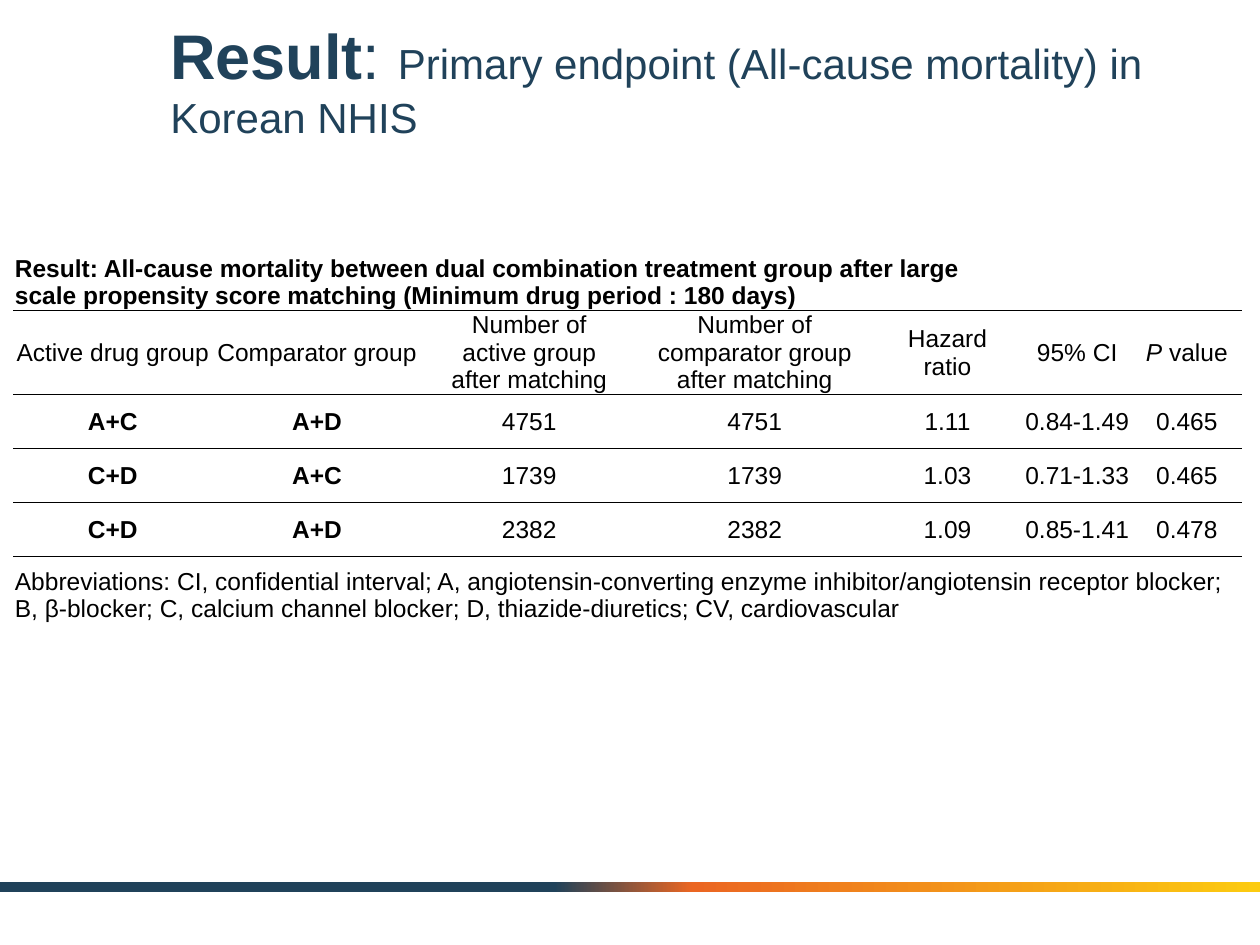
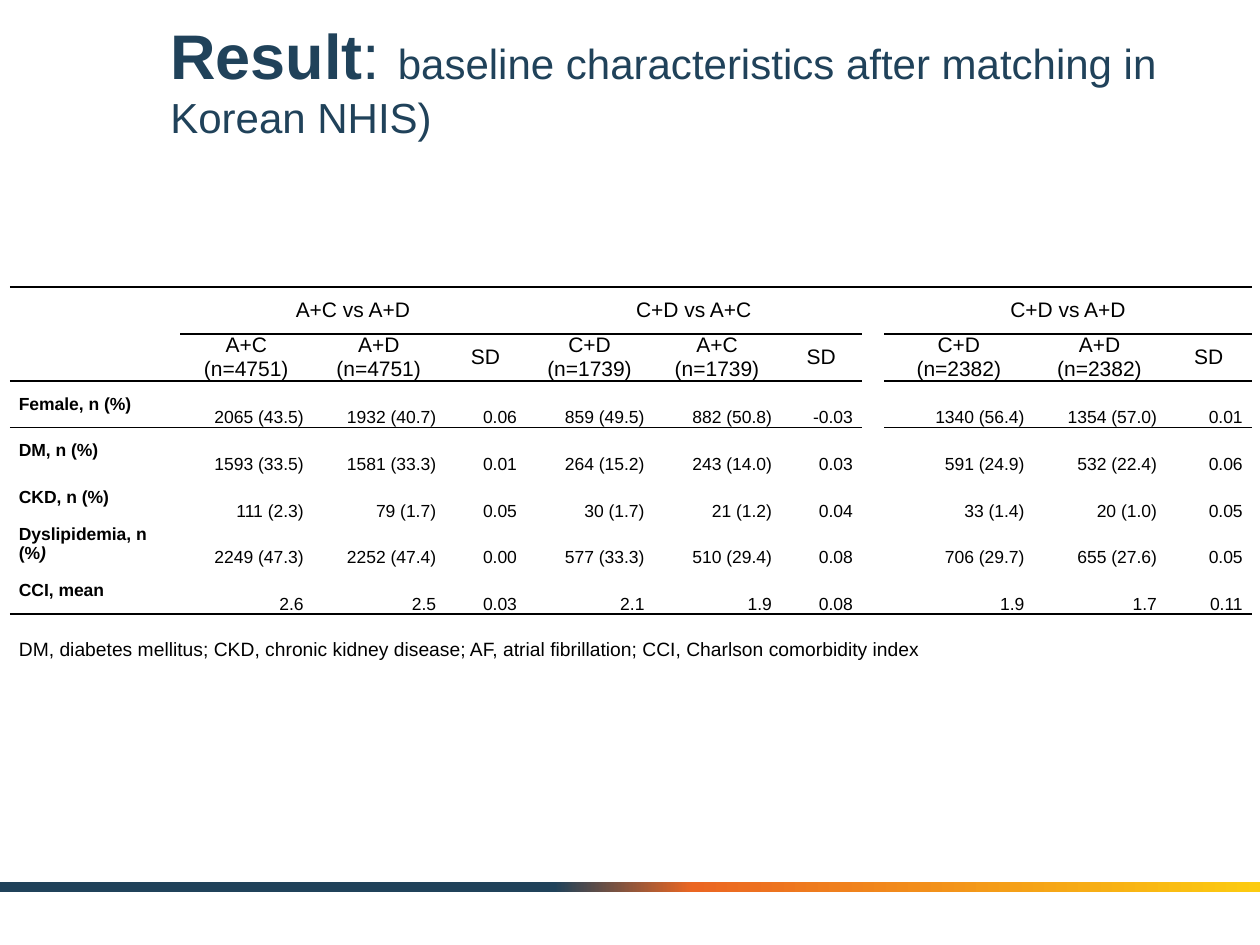
from lxml.etree import SubElement
from pptx import Presentation
from pptx.dml.color import RGBColor
from pptx.enum.shapes import MSO_SHAPE
from pptx.enum.text import MSO_ANCHOR, MSO_AUTO_SIZE, PP_ALIGN
from pptx.oxml.ns import qn
from pptx.util import Cm, Pt

FONT = "Arial"
COLORS = {"navy": "20425A", "orange": "EB6622", "yellow": "FCCB10",
          "black": "000000", "white": "FFFFFF"}
BAND_STOPS = [(44, "navy"), (55, "orange"), (100, "yellow")]
NO_GRID_STYLE = "{2D5ABB26-0587-4C30-8999-92F81FD0307C}"

# Text between asterisks is italic.
MORTALITY = {
    "title": "Primary endpoint (All-cause mortality) in Korean NHIS",
    "caption": "Result: All-cause mortality between dual combination treatment group "
               "after large scale propensity score matching "
               "(Minimum drug period : 180 days)",
    "header": ["Active drug group", "Comparator group",
               "Number of\nactive group\nafter matching",
               "Number of\ncomparator group after matching",
               "Hazard\nratio", "95% CI", "*P* value"],
    "rows": [
        ["A+C", "A+D", "4751", "4751", "1.11", "0.84-1.49", "0.465"],
        ["C+D", "A+C", "1739", "1739", "1.03", "0.71-1.33", "0.465"],
        ["C+D", "A+D", "2382", "2382", "1.09", "0.85-1.41", "0.478"],
    ],
    "note": "Abbreviations: CI, confidential interval; A, angiotensin-converting enzyme "
            "inhibitor/angiotensin receptor blocker; B, β-blocker; C, calcium channel "
            "blocker; D, thiazide-diuretics; CV, cardiovascular",
    "widths": [4.01, 4.22, 4.34, 4.75, 3.02, 2.21, 2.21],
    "heights": [1.09, 1.63, 1.09, 1.09, 1.09, 1.55],
}

BASELINE = {
    "title": "baseline characteristics after matching in Korean NHIS)",
    "groups": {1: "A+C vs A+D", 4: "C+D vs A+C", 8: "C+D vs A+D"},
    "header": ["", "A+C (n=4751)", "A+D (n=4751)", "SD",
               "C+D (n=1739)", "A+C (n=1739)", "SD", "",
               "C+D\n(n=2382)", "A+D (n=2382)", "SD"],
    "rows": [
        ["Female, n (%)", "2065 (43.5)", "1932 (40.7)", "0.06",
         "859 (49.5)", "882 (50.8)", "-0.03", "", "1340 (56.4)", "1354 (57.0)", "0.01"],
        ["DM, n (%)", "1593 (33.5)", "1581 (33.3)", "0.01",
         "264 (15.2)", "243 (14.0)", "0.03", "", "591 (24.9)", "532 (22.4)", "0.06"],
        ["CKD, n (%)", "111 (2.3)", "79 (1.7)", "0.05",
         "30 (1.7)", "21 (1.2)", "0.04", "", "33 (1.4)", "20 (1.0)", "0.05"],
        ["Dyslipidemia, n (%*)*", "2249 (47.3)", "2252 (47.4)", "0.00",
         "577 (33.3)", "510 (29.4)", "0.08", "", "706 (29.7)", "655 (27.6)", "0.05"],
        ["CCI, mean", "2.6", "2.5", "0.03", "2.1", "1.9", "0.08", "", "1.9", "1.7", "0.11"],
    ],
    "note": "DM, diabetes mellitus; CKD, chronic kidney disease; AF, atrial fibrillation; "
            "CCI, Charlson comorbidity index",
    "widths": [3.43, 2.67, 2.67, 1.63, 2.57, 2.57, 1.63, 0.43, 3.0, 2.67, 1.73],
    "heights": [0.94] * 8,
}


def rgb(name):
    return RGBColor.from_string(COLORS[name])


def style_run(run, size, color="black", bold=False, italic=False):
    run.font.name = FONT
    run.font.size = Pt(size)
    run.font.bold = bold
    run.font.italic = italic
    run.font.color.rgb = rgb(color)


def add_band(slide, slide_width):
    band = slide.shapes.add_shape(MSO_SHAPE.RECTANGLE, 0, Cm(17.78), slide_width, Cm(0.2))
    band.shadow.inherit = False
    band.line.fill.background()
    band.fill.gradient()
    band.fill.gradient_angle = 0
    stops = band.element.spPr.find(".//" + qn("a:gsLst"))
    for stop in list(stops):
        stops.remove(stop)
    for percent, color in BAND_STOPS:
        stop = SubElement(stops, qn("a:gs"), pos=str(percent * 1000))
        SubElement(stop, qn("a:srgbClr"), val=COLORS[color])


def add_result_slide(presentation, topic):
    slide = presentation.slides.add_slide(presentation.slide_layouts[5])
    add_band(slide, presentation.slide_width)
    title = slide.shapes.title
    title.left, title.top, title.width, title.height = Cm(3.18), Cm(0.43), Cm(20.96), Cm(2.34)
    frame = title.text_frame
    frame.auto_size = MSO_AUTO_SIZE.NONE
    frame.vertical_anchor = MSO_ANCHOR.MIDDLE
    paragraph = frame.paragraphs[0]
    paragraph.alignment = PP_ALIGN.LEFT
    for text, size, bold in [("Result", 36, True), (": ", 36, False), (topic, 24, False)]:
        run = paragraph.add_run()
        run.text = text
        style_run(run, size, "navy", bold)
    return slide


def add_plain_table(slide, left, top, widths, heights, margins, fill=None):
    """Add a table without grid; margins are left and right, then top, in cm."""
    frame = slide.shapes.add_table(len(heights), len(widths), Cm(left), Cm(top),
                                   Cm(sum(widths)), Cm(sum(heights)))
    frame.element.find(".//" + qn("a:tableStyleId")).text = NO_GRID_STYLE
    table = frame.table
    table.first_row = table.horz_banding = False
    for column, width in zip(table.columns, widths):
        column.width = Cm(width)
    for row, height in zip(table.rows, heights):
        row.height = Cm(height)
    for cell in table.iter_cells():
        cell.margin_left = cell.margin_right = Cm(margins[0])
        cell.margin_top, cell.margin_bottom = Cm(margins[1]), 0
        if fill:
            cell.fill.solid()
            cell.fill.fore_color.rgb = rgb(fill)
        else:
            cell.fill.background()
    return table


def set_cell(cell, text, size, bold=False, align=PP_ALIGN.CENTER, anchor=MSO_ANCHOR.MIDDLE):
    cell.vertical_anchor = anchor
    frame = cell.text_frame
    if "*" in text:
        for index, part in enumerate(text.split("*")):
            if part:
                run = frame.paragraphs[0].add_run()
                run.text = part
                style_run(run, size, bold=bold, italic=index % 2 == 1)
    else:
        frame.text = text
        for paragraph in frame.paragraphs:
            for run in paragraph.runs:
                style_run(run, size, bold=bold)
    for paragraph in frame.paragraphs:
        paragraph.alignment = align


def merge_across(table, row, first, last):
    cell = table.cell(row, first)
    cell.merge(table.cell(row, last))
    return cell


def add_border(cell, tag, points):
    properties = cell._tc.get_or_add_tcPr()
    line = SubElement(properties, qn(tag), w=str(Pt(points)))
    fill = SubElement(line, qn("a:solidFill"))
    SubElement(fill, qn("a:srgbClr"), val=COLORS["black"])
    borders_before = len(properties.findall(qn("a:lnT"))) if tag == "a:lnB" else 0
    properties.insert(borders_before, line)


def rule_below(table, row, columns, points):
    """Draw a line under a row; row -1 stands for the table's top edge."""
    for column in columns:
        if row >= 0:
            add_border(table.cell(row, column), "a:lnB", points)
        if row + 1 < len(table.rows):
            add_border(table.cell(row + 1, column), "a:lnT", points)


def build_mortality(presentation):
    data = MORTALITY
    slide = add_result_slide(presentation, data["title"])
    table = add_plain_table(slide, 0.27, 5.11, data["widths"], data["heights"], (0.03, 0.03))
    last_row, last_column = len(data["heights"]) - 1, len(data["widths"]) - 1
    set_cell(merge_across(table, 0, 0, 4), data["caption"], 14, True, PP_ALIGN.LEFT)
    for r, row in enumerate([data["header"]] + data["rows"], start=1):
        for c, text in enumerate(row):
            set_cell(table.cell(r, c), text, 14, bold=r > 1 and c < 2)
    set_cell(merge_across(table, last_row, 0, last_column), data["note"], 14,
             align=PP_ALIGN.LEFT)
    for r in range(last_row):
        rule_below(table, r, range(last_column + 1), 0.5)


def build_baseline(presentation):
    data = BASELINE
    slide = add_result_slide(presentation, data["title"])
    table = add_plain_table(slide, 0.2, 5.79, data["widths"], data["heights"],
                            (0.18, 0), "white")
    last_row, columns = len(data["heights"]) - 1, range(len(data["widths"]))
    group_columns = [first + k for first in data["groups"] for k in range(3)]
    for first, name in data["groups"].items():
        set_cell(merge_across(table, 0, first, first + 2), name, 12)
    for c, text in enumerate(data["header"]):
        set_cell(table.cell(1, c), text, 12)
    for r, (label, *values) in enumerate(data["rows"], start=2):
        set_cell(table.cell(r, 0), label, 10, True, PP_ALIGN.LEFT)
        for c, value in enumerate(values, start=1):
            set_cell(table.cell(r, c), value, 10, align=PP_ALIGN.RIGHT,
                     anchor=MSO_ANCHOR.BOTTOM)
    set_cell(merge_across(table, last_row, 0, columns[-1]), data["note"], 11,
             align=PP_ALIGN.LEFT, anchor=MSO_ANCHOR.BOTTOM)
    for row, ruled in [(-1, columns), (0, group_columns),
                       (1, [0] + group_columns), (last_row - 1, columns)]:
        rule_below(table, row, ruled, 1)


def main():
    presentation = Presentation()
    presentation.slide_width, presentation.slide_height = Cm(25.4), Cm(19.05)
    build_mortality(presentation)
    build_baseline(presentation)
    presentation.save("out.pptx")


if __name__ == "__main__":
    main()
